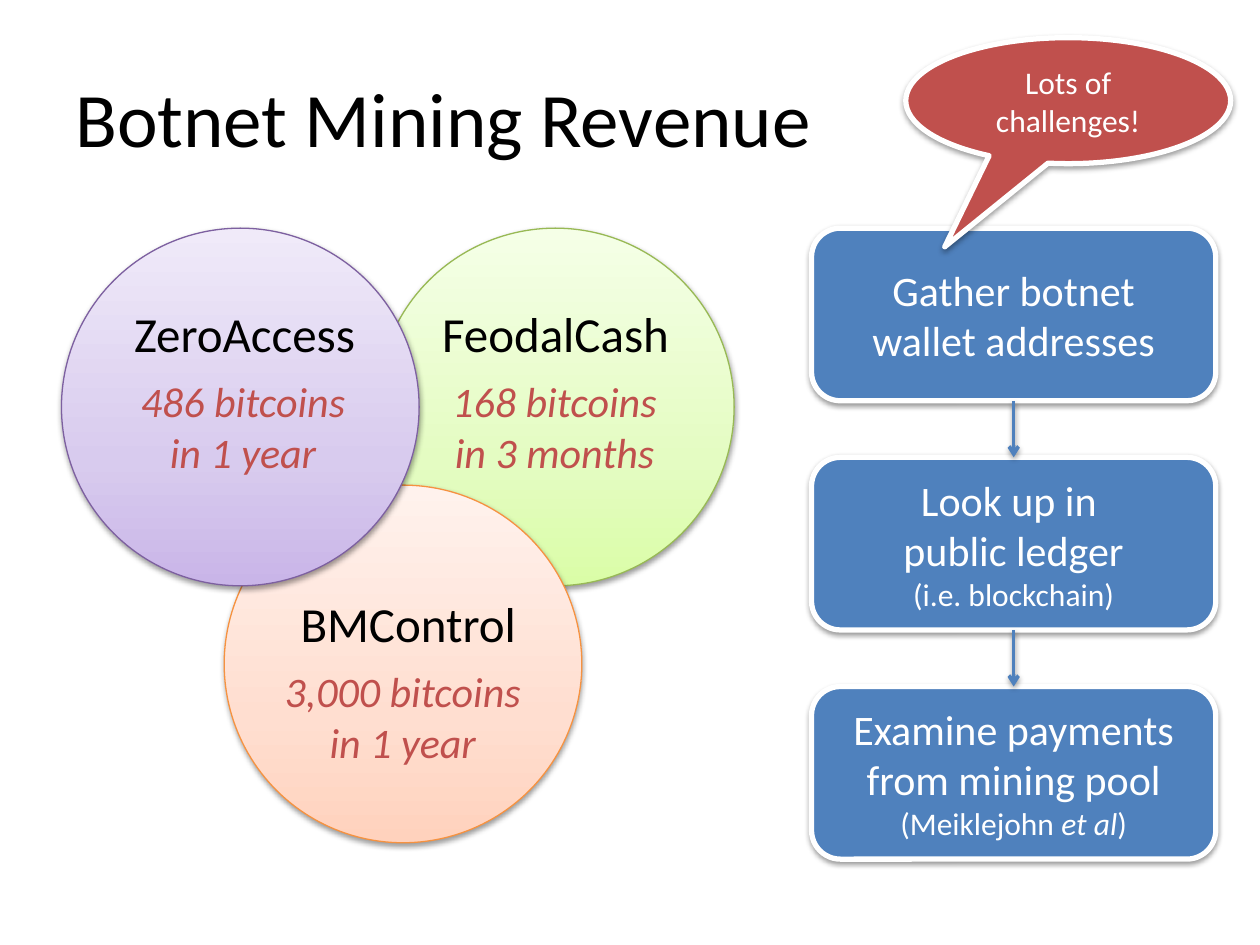
from copy import deepcopy
from lxml import etree
from pptx import Presentation
from pptx.dml.color import RGBColor
from pptx.enum.shapes import MSO_CONNECTOR, MSO_SHAPE
from pptx.enum.text import MSO_ANCHOR, PP_ALIGN
from pptx.oxml.ns import qn
from pptx.util import Cm, Pt

OVAL = MSO_SHAPE.OVAL
ROUND = MSO_SHAPE.ROUNDED_RECTANGLE
BUBBLE = MSO_SHAPE.OVAL_CALLOUT
LINE = MSO_CONNECTOR.STRAIGHT
MIDDLE, TOP = MSO_ANCHOR.MIDDLE, MSO_ANCHOR.TOP
CENTER, LEFT = PP_ALIGN.CENTER, PP_ALIGN.LEFT
BLUE, RED, WHITE, BLACK = "4F81BD", "C0504D", "FFFFFF", "000000"
rgb = RGBColor.from_string


def style(shape, line, width, fills=()):
    """Set the fill (one colour, or three from bottom to top), line and shadow."""
    props = shape._element.spPr
    if len(fills) == 1:
        shape.fill.solid()
        shape.fill.fore_color.rgb = rgb(fills[0])
    elif fills:
        shape.fill.gradient()
        shape.fill.gradient_angle = 90
        stops = props.find(".//" + qn("a:gsLst"))
        stops.append(deepcopy(stops[0]))
        for stop, place, color in zip(shape.fill.gradient_stops, (0, 0.35, 1), fills):
            stop.position = place
            stop.color.rgb = rgb(color)
    shape.line.color.rgb = rgb(line)
    shape.line.width = Pt(width)
    effects = etree.SubElement(props, qn("a:effectLst"))
    shadow = etree.SubElement(effects, qn("a:outerShdw"), blurRad="40000",
                              dist="20000", dir="5400000", rotWithShape="0")
    tint = etree.SubElement(shadow, qn("a:srgbClr"), val=BLACK)
    etree.SubElement(tint, qn("a:alpha"), val="38000")


def write(frame, text, size=24, color=WHITE, italic=False, align=CENTER, anchor=MIDDLE):
    """Add text to the last paragraph; \\n starts a paragraph, \\v breaks a line."""
    frame.word_wrap = True
    frame.vertical_anchor = anchor
    for i, block in enumerate(text.split("\n")):
        para = frame.add_paragraph() if i else frame.paragraphs[-1]
        para.alignment = align
        for j, part in enumerate(block.split("\v")):
            if j:
                para.add_line_break()
            if part:
                run = para.add_run()
                run.text = part
                run.font.name = "Calibri"
                run.font.size = Pt(size)
                run.font.italic = italic
                run.font.color.rgb = rgb(color)


deck = Presentation()
deck.slide_width, deck.slide_height = Cm(25.4), Cm(19.05)
slide = deck.slides.add_slide(deck.slide_layouts[6])
shapes = slide.shapes

# Title
title = shapes.add_textbox(Cm(1.27), Cm(0.76), Cm(22.86), Cm(3.18))
write(title.text_frame, "Botnet Mining Revenue", size=44, color=BLACK, align=LEFT)

# Botnet circles: name, revenue, left, top, text top, text centres, line, fills
botnets = [
    ("FeodalCash", "168 bitcoins\nin 3 months", 7.59, 4.6, 5.99, 11.2, 11.18,
     "98B955", ("DAFDA7", "E4FCC2", "F5FFE7")),
    ("BMControl", "3,000 bitcoins\nin 1 year", 4.52, 9.78, 11.84, 8.23, 8.12,
     "F69240", ("FFD2BD", "FFDED0", "FFF2ED")),
    ("ZeroAccess", "486 bitcoins\nin 1 year", 1.24, 4.6, 5.99, 4.93, 4.9,
     "7D60A0", ("C9B5E8", "D8CBEE", "F0EAF9")),
]
size, wide = 7.21, 6.1
for name, coins, left, top, head, mid, low, line, fills in botnets:
    disc = shapes.add_shape(OVAL, Cm(left), Cm(top), Cm(size), Cm(size))
    style(disc, line, 0.75, fills)
    label = shapes.add_textbox(Cm(mid - wide / 2), Cm(head), Cm(wide), Cm(1.45))
    write(label.text_frame, name, size=28, color=BLACK, anchor=TOP)
    sum_box = shapes.add_textbox(Cm(low - wide / 2), Cm(head + 1.46), Cm(wide), Cm(2.31))
    write(sum_box.text_frame, coins, color=RED, italic=True, anchor=TOP)

# Method steps: main text, then smaller notes as (text, italic)
steps = [
    ("Gather botnet\vwallet addresses", []),
    ("Look up in \vpublic ledger\v", [("(i.e. blockchain)", False)]),
    ("Examine payments\vfrom mining pool\v",
     [("(Meiklejohn ", False), ("et al", True), (")", False)]),
]
left, first, width, height, pitch = 16.36, 4.6, 8.15, 3.48, 4.62
for i, (text, notes) in enumerate(steps):
    box = shapes.add_shape(ROUND, Cm(left), Cm(first + i * pitch), Cm(width), Cm(height))
    style(box, WHITE, 3, [BLUE])
    write(box.text_frame, text)
    for note, slant in notes:
        write(box.text_frame, note, size=18, italic=slant)

# Arrows between the steps
mid = Cm(left + width / 2)
for i in range(len(steps) - 1):
    top = first + i * pitch
    arrow = shapes.add_connector(LINE, mid, Cm(top + height), mid, Cm(top + pitch))
    style(arrow, BLUE, 2)
    etree.SubElement(arrow.line._get_or_add_ln(), qn("a:tailEnd"), type="arrow")

# Callout
bubble = shapes.add_shape(BUBBLE, Cm(18.26), Cm(0.76), Cm(6.55), Cm(2.54))
bubble.adjustments[0], bubble.adjustments[1] = -0.38, 1.16
style(bubble, WHITE, 3, [RED])
write(bubble.text_frame, "Lots of challenges!", size=18)

deck.save("out.pptx")
